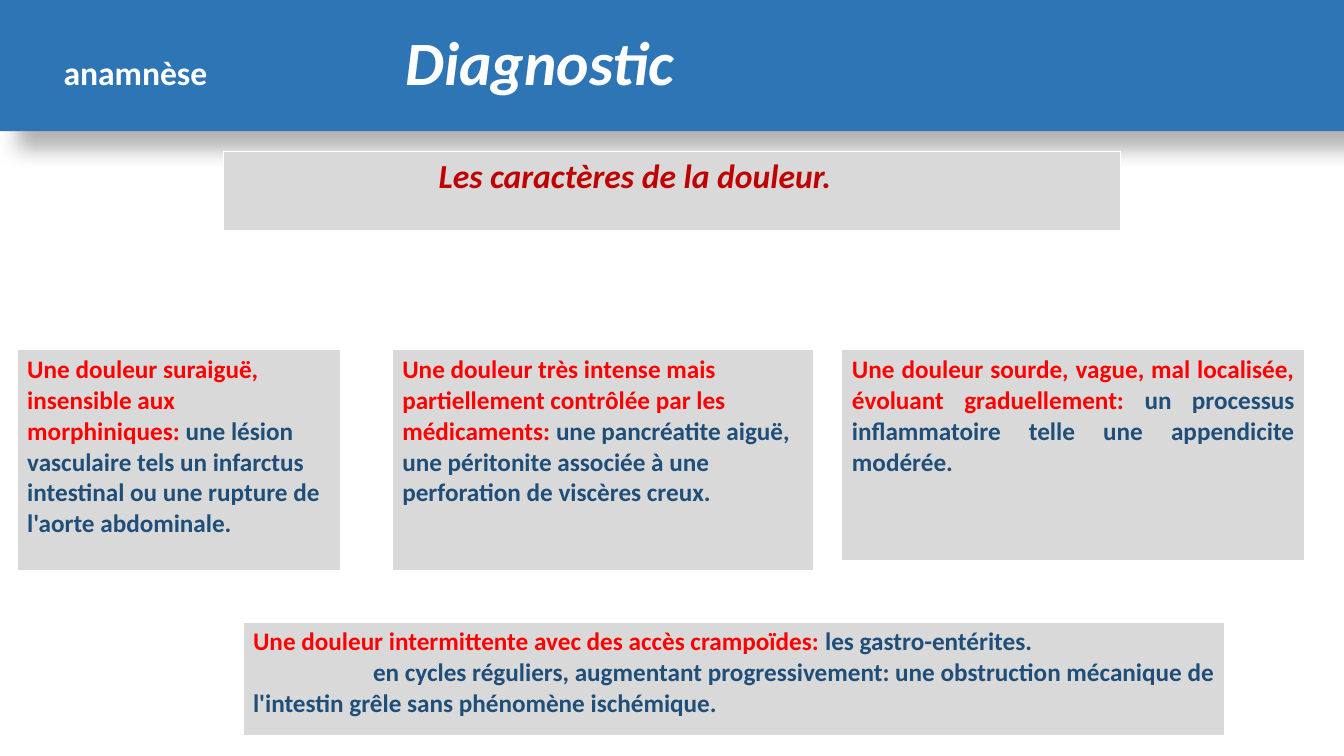
from dataclasses import dataclass

from lxml import etree
from pptx import Presentation
from pptx.dml.color import RGBColor
from pptx.enum.text import MSO_ANCHOR, PP_ALIGN
from pptx.util import Inches, Pt

LEFT, JUSTIFY = PP_ALIGN.LEFT, PP_ALIGN.JUSTIFY
MIDDLE = MSO_ANCHOR.MIDDLE
DRAWING_NS = "http://schemas.openxmlformats.org/drawingml/2006/main"


@dataclass(frozen=True)
class Theme:
    font: str = "Calibri"
    banner: str = "2E75B6"
    panel: str = "D9D9D9"
    white: str = "FFFFFF"
    heading: str = "C00000"
    symptom: str = "FF0000"
    cause: str = "1F4E79"
    shadow: str = "000000"
    title_size: int = 44
    heading_size: int = 24
    body_size: int = 18


def add_xml(parent, markup):
    wrapper = etree.fromstring(f'<a:x xmlns:a="{DRAWING_NS}">{markup}</a:x>')
    for element in wrapper:
        parent.append(element)


class DiagnosisSlide:
    def __init__(self, slide, theme):
        self.slide = slide
        self.theme = theme

    def add_words(self, paragraph, text, size, color, italic=False):
        run = paragraph.add_run()
        run.text = text
        font = run.font
        font.name, font.size = self.theme.font, Pt(size)
        font.bold, font.italic = True, italic
        font.color.rgb = RGBColor.from_string(color)

    def banner(self, section, topic, width, height):
        theme = self.theme
        title = self.slide.shapes.title
        title.left, title.top = Inches(0), Inches(0)
        title.width, title.height = Inches(width), Inches(height)
        title.fill.solid()
        title.fill.fore_color.rgb = RGBColor.from_string(theme.banner)
        title.line.fill.background()
        add_xml(title._element.spPr, f'''<a:effectLst>
            <a:outerShdw blurRad="{Pt(15)}" dist="{Pt(18)}" dir="2700000" algn="tl" rotWithShape="0">
            <a:srgbClr val="{theme.shadow}"><a:alpha val="30000"/></a:srgbClr>
            </a:outerShdw></a:effectLst>''')
        frame = title.text_frame
        frame.word_wrap = True
        frame.vertical_anchor = MIDDLE
        frame.margin_left = Inches(0.63)
        paragraph = frame.paragraphs[0]
        paragraph.alignment = LEFT
        paragraph.line_spacing = 0.9
        add_xml(paragraph._p.get_or_add_pPr(),
                f'<a:tabLst><a:tab pos="{Inches(3.39)}" algn="l"/></a:tabLst>')
        self.add_words(paragraph, section + "\t", theme.heading_size, theme.white)
        self.add_words(paragraph, topic, theme.title_size, theme.white, italic=True)

    def panel(self, left, top, width, height):
        theme = self.theme
        table = self.slide.shapes.add_table(
            1, 1, Inches(left), Inches(top), Inches(width), Inches(height)).table
        table.first_row = table.horz_banding = False
        cell = table.cell(0, 0)
        properties = cell._tc.get_or_add_tcPr()
        for side, points in (("L", 1), ("R", 1), ("T", 1), ("B", 3)):
            add_xml(properties, f'''<a:ln{side} w="{Pt(points)}"><a:solidFill>
                <a:srgbClr val="{theme.white}"/></a:solidFill></a:ln{side}>''')
        cell.fill.solid()
        cell.fill.fore_color.rgb = RGBColor.from_string(theme.panel)
        return cell

    def heading(self, text, left, top, width, height):
        cell = self.panel(left, top, width, height)
        cell.margin_left = Inches(2.13)
        self.add_words(cell.text_frame.paragraphs[0], text,
                       self.theme.heading_size, self.theme.heading, italic=True)

    def pain(self, symptom, cause, box, alignment=LEFT):
        frame = self.panel(*box).text_frame
        paragraph = frame.paragraphs[0]
        paragraph.alignment = alignment
        self.add_words(paragraph, symptom + " ", self.theme.body_size, self.theme.symptom)
        self.add_words(paragraph, cause, self.theme.body_size, self.theme.cause)
        return frame

    def continuation(self, frame, text, first_line):
        paragraph = frame.add_paragraph()
        properties = paragraph._p.get_or_add_pPr()
        properties.set("marL", "0")
        properties.set("indent", str(Inches(first_line)))
        self.add_words(paragraph, text, self.theme.body_size, self.theme.cause)


def main():
    presentation = Presentation()
    presentation.slide_width, presentation.slide_height = Inches(13.33), Inches(7.5)
    page = DiagnosisSlide(
        presentation.slides.add_slide(presentation.slide_layouts[5]), Theme())

    page.banner("anamnèse", "Diagnostic", 13.33, 1.3)
    page.heading("Les caractères de la douleur.", 2.22, 1.5, 8.89, 0.8)

    row_top = 3.47
    page.pain("Une douleur suraiguë, insensible aux morphiniques:",
              "une lésion vasculaire tels un infarctus intestinal ou une rupture "
              "de l'aorte abdominale.", (0.17, row_top, 3.21, 2.2))
    page.pain("Une douleur très intense mais partiellement contrôlée par les médicaments:",
              "une pancréatite aiguë, une péritonite associée à une perforation "
              "de viscères creux.", (3.89, row_top, 4.18, 2.2))
    page.pain("Une douleur sourde, vague, mal localisée, évoluant graduellement:",
              "un processus inflammatoire telle une appendicite modérée.",
              (8.35, row_top, 4.59, 2.1), JUSTIFY)
    intermittent = page.pain("Une douleur intermittente avec des accès crampoïdes:",
                             "les gastro-entérites.", (2.41, 6.17, 9.74, 1.14))
    page.continuation(intermittent,
                      "en cycles réguliers, augmentant progressivement: une obstruction "
                      "mécanique de l'intestin grêle sans phénomène ischémique.", 1.19)

    presentation.save("out.pptx")


if __name__ == "__main__":
    main()
